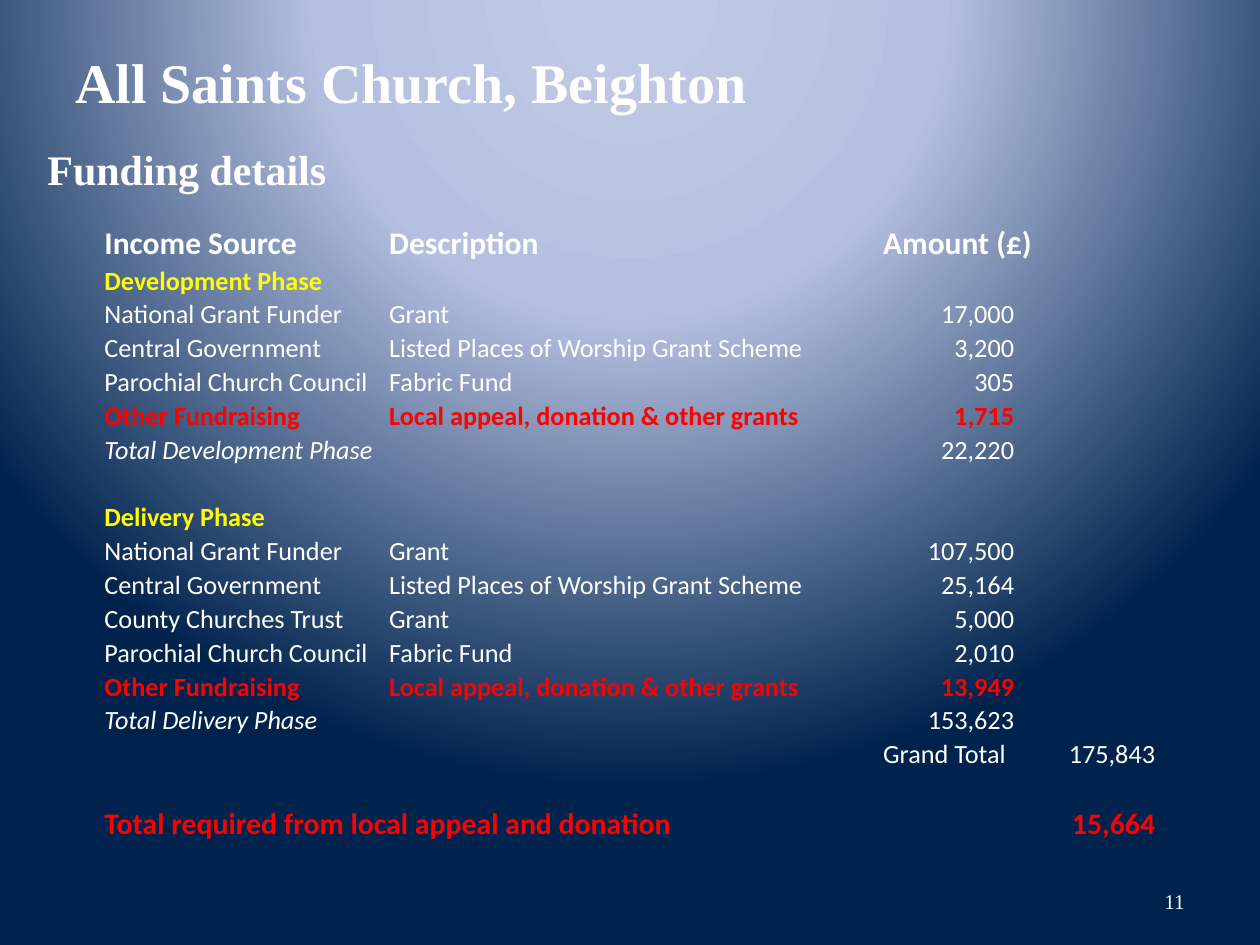
from dataclasses import dataclass

from lxml import etree
from pptx import Presentation
from pptx.dml.color import RGBColor
from pptx.enum.text import MSO_ANCHOR, PP_ALIGN
from pptx.oxml import parse_xml
from pptx.oxml.ns import nsdecls, qn
from pptx.util import Pt

LEFT, RIGHT = PP_ALIGN.LEFT, PP_ALIGN.RIGHT
TOP, MIDDLE, BOTTOM = MSO_ANCHOR.TOP, MSO_ANCHOR.MIDDLE, MSO_ANCHOR.BOTTOM
PLAIN_TABLE_STYLE = "{2D5ABB26-0587-4C30-8999-92F81FD0307C}"


@dataclass(frozen=True)
class Theme:
    """Colours, fonts and type sizes of the slide."""
    white: str = "FFFFFF"
    phase: str = "FFFF00"
    appeal: str = "FF0000"
    backdrop: tuple = ((4, "BFC9E5"), (40, "B5C0E0"), (100, "00234D"))
    heading_font: str = "Times New Roman"
    table_font: str = "Calibri"
    title_size: int = 32
    subtitle_size: int = 24
    number_size: int = 12
    header_size: int = 18
    body_size: int = 15
    required_size: int = 17


@dataclass(frozen=True)
class Look:
    """Type style of one run of text."""
    size: int
    color: str
    bold: bool = False
    italic: bool = False


class SlideBuilder:
    """Adds styled elements to the current slide."""

    def __init__(self, slide, theme):
        self.slide = slide
        self.theme = theme

    def background(self):
        stops = "".join(
            f'<a:gs pos="{position * 1000}"><a:srgbClr val="{color}"/></a:gs>'
            for position, color in self.theme.backdrop)
        self.slide.element.cSld.insert(0, parse_xml(
            f'<p:bg {nsdecls("p", "a")}><p:bgPr><a:gradFill rotWithShape="1">'
            f'<a:gsLst>{stops}</a:gsLst><a:path path="circle">'
            '<a:fillToRect l="50000" t="-80000" r="50000" b="180000"/></a:path>'
            '</a:gradFill><a:effectLst/></p:bgPr></p:bg>'))

    def run(self, paragraph, text, font, look):
        run = paragraph.add_run()
        run.text = text
        run.font.name = font
        run.font.size = Pt(look.size)
        run.font.bold = look.bold
        run.font.italic = look.italic
        run.font.color.rgb = RGBColor.from_string(look.color)

    def text(self, text, box, look, align=LEFT, anchor=TOP, wrap=True):
        frame = self.slide.shapes.add_textbox(*map(Pt, box)).text_frame
        frame.word_wrap = wrap
        frame.vertical_anchor = anchor
        paragraph = frame.paragraphs[0]
        paragraph.alignment = align
        self.run(paragraph, text, self.theme.heading_font, look)

    def cell(self, cell, text, look, align):
        cell.fill.background()
        cell.vertical_anchor = BOTTOM
        cell.margin_left = cell.margin_right = cell.margin_top = Pt(0.72)
        cell.margin_bottom = Pt(0)
        paragraph = cell.text_frame.paragraphs[0]
        paragraph.alignment = align
        if text:
            self.run(paragraph, text, self.theme.table_font, look)
        else:
            etree.SubElement(paragraph._p, qn("a:endParaRPr"), sz=str(look.size * 100))

    def table(self, rows, left, top, widths, heights, merges):
        frame = self.slide.shapes.add_table(
            len(rows), len(widths), Pt(left), Pt(top), Pt(sum(widths)), Pt(sum(heights)))
        table = frame.table
        table.first_row = table.horz_banding = False
        table._tbl.tblPr.find(qn("a:tableStyleId")).text = PLAIN_TABLE_STYLE
        for column, width in zip(table.columns, widths):
            column.width = Pt(width)
        for row, height in zip(table.rows, heights):
            row.height = Pt(height)
        for r, (look, amount_look, texts) in enumerate(rows):
            for c, text in enumerate(texts):
                numeric = text.replace(",", "").isdigit()
                self.cell(table.cell(r, c), text, amount_look if numeric else look,
                          RIGHT if numeric else LEFT)
        for start, end in merges:
            table.cell(*start).merge(table.cell(*end))


def funding_rows(theme):
    """Return the funding rows with their label and amount looks."""
    body = Look(theme.body_size, theme.white)
    italic = Look(theme.body_size, theme.white, italic=True)
    phase = Look(theme.body_size, theme.phase, bold=True)
    appeal = Look(theme.body_size, theme.appeal, bold=True)
    header = Look(theme.header_size, theme.white, bold=True)
    required = Look(theme.required_size, theme.appeal, bold=True)
    funder, government = "National Grant Funder", "Central Government"
    council, scheme = "Parochial Church Council", "Listed Places of Worship Grant Scheme"
    other, local = "Other Fundraising", "Local appeal, donation & other grants"
    entries = [
        (header, "Income Source", "Description", "Amount (£)"),
        (phase, "Development Phase"),
        (body, funder, "Grant", "17,000"),
        (body, government, scheme, "3,200"),
        (body, council, "Fabric Fund", "305"),
        (appeal, other, local, "1,715"),
        (italic, "Total Development Phase", "", "22,220"),
        (body,),
        (phase, "Delivery Phase"),
        (body, funder, "Grant", "107,500"),
        (body, government, scheme, "25,164"),
        (body, "County Churches Trust", "Grant", "5,000"),
        (body, council, "Fabric Fund", "2,010"),
        (appeal, other, local, "13,949"),
        (italic, "Total Delivery Phase", "", "153,623"),
        (body, "", "", "Grand Total", "175,843"),
        (body,),
        (required, "Total required from local appeal and donation", "", "", "15,664"),
    ]
    return [(look, body if look is italic else look, texts + [""] * (4 - len(texts)))
            for look, *texts in entries]


def main():
    """Build the funding slide and save it."""
    theme = Theme()
    deck = Presentation()
    deck.slide_width, deck.slide_height = Pt(720), Pt(540)
    builder = SlideBuilder(deck.slides.add_slide(deck.slide_layouts[6]), theme)
    builder.background()
    builder.text("11", (516, 500.5, 168, 28.8), Look(theme.number_size, theme.white),
                 align=RIGHT, anchor=MIDDLE)
    builder.text("Funding details", (20, 78.5, 176, 36),
                 Look(theme.subtitle_size, theme.white, bold=True), wrap=False)
    builder.text("All Saints Church, Beighton", (36, 21.6, 648, 50),
                 Look(theme.title_size, theme.white, bold=True), anchor=MIDDLE)
    rows = funding_rows(theme)
    last = len(rows) - 1
    builder.table(rows, 59, 126, widths=(162.7, 282.3, 76.3, 80.6),
                  heights=[24.5] + [19.36] * (last - 1) + [21.6],
                  merges=[((0, 2), (0, 3)), ((last, 0), (last, 1))])
    deck.save("out.pptx")


if __name__ == "__main__":
    main()
